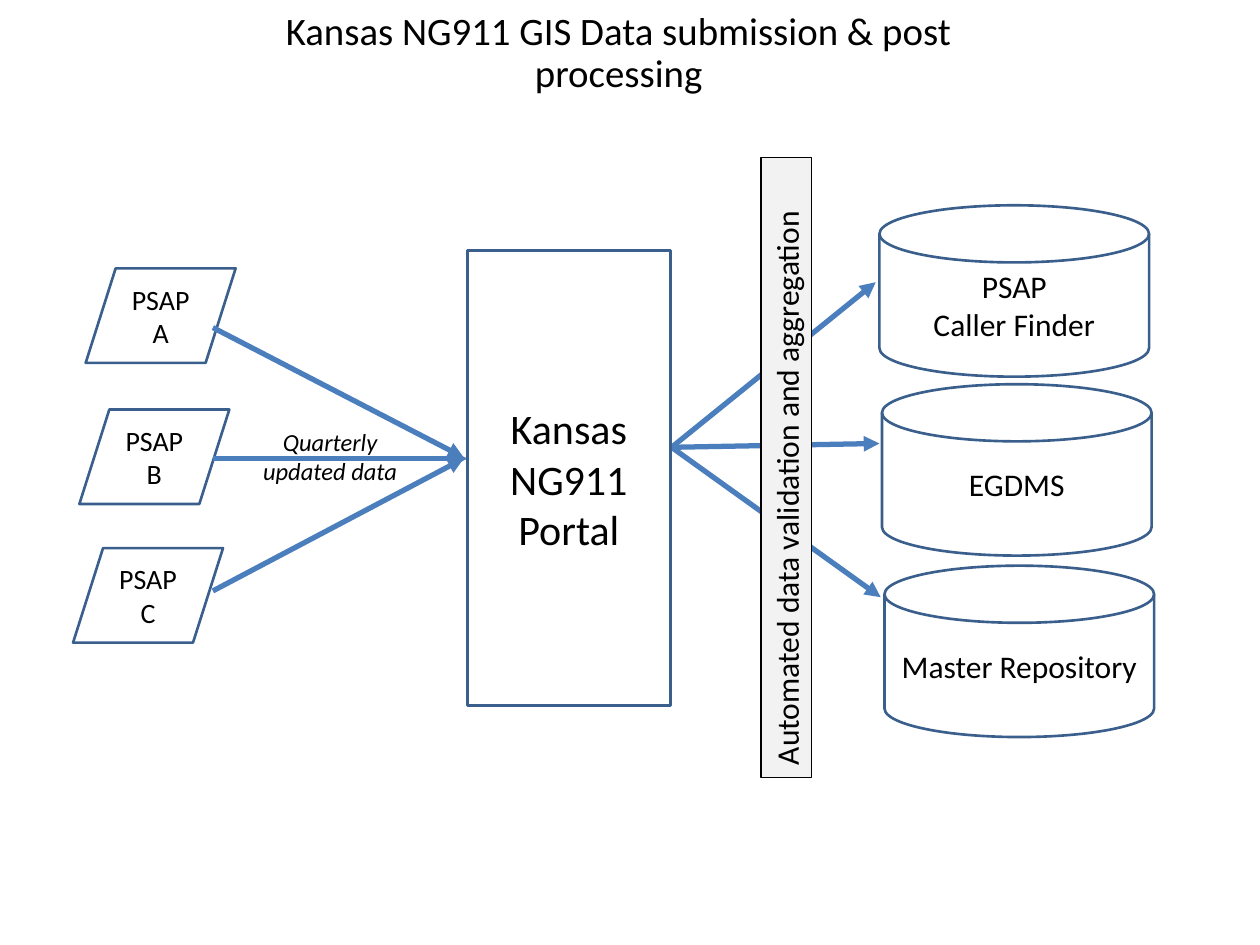
from pptx import Presentation
from pptx.dml.color import RGBColor
from pptx.enum.shapes import MSO_CONNECTOR, MSO_SHAPE
from pptx.enum.text import MSO_ANCHOR, PP_ALIGN
from pptx.oxml.ns import qn
from pptx.util import Inches, Pt
from lxml.etree import SubElement

THEME = dict(font="Calibri", text="000000", outline="3A5F8C", arrow="4B7EBC", band="F2F2F2",
             title=22.2, portal=24, store=18, source=16, note=14)

TITLE = ["Kansas NG911 GIS Data submission & post processing"]
NOTE = ["Quarterly updated data"]
BAND = ["Automated data validation and aggregation"]
PORTAL = ["Kansas", "NG911 Portal"]
SOURCES = [(["PSAP A"], 0.68, 2.13), (["PSAP B"], 0.63, 3.25), (["PSAP C"], 0.58, 4.35)]
STORES = [(["PSAP", "Caller Finder"], 6.98, 1.63), (["EGDMS"], 7, 3.05),
          (["Master Repository"], 7.02, 4.49)]
SOURCE_SIZE = (1.19, 0.75)
STORE_SIZE = (2.14, 1.36)
SOURCE_X, PORTAL_OUT = 1.69, (5.33, 3.55)
INBOUND = [(2.6, (3.68, 3.63)), (3.64, (3.71, 3.64)), (4.69, (3.68, 3.64))]
OUTBOUND = [(6.95, 2.24), (6.98, 3.52), (6.99, 4.74)]


def rgb(name):
    return RGBColor.from_string(THEME[name])


def write(sp, lines, size, align=PP_ALIGN.CENTER, anchor=MSO_ANCHOR.MIDDLE):
    tf = sp.text_frame
    tf.word_wrap = True
    tf.vertical_anchor = anchor
    tf.text = "\n".join(lines)
    for p in tf.paragraphs:
        p.alignment = align
        p.font.name = THEME["font"]
        p.font.size = Pt(THEME[size])
        p.font.color.rgb = rgb("text")
    return tf


def add_box(s, kind, box, line="outline", width=1.5, fill=None):
    sp = s.shapes.add_shape(kind, *map(Inches, box))
    sp.shadow.inherit = False
    if fill:
        sp.fill.solid()
        sp.fill.fore_color.rgb = rgb(fill)
    else:
        sp.fill.background()
    sp.line.color.rgb = rgb(line)
    sp.line.width = Pt(width)
    return sp


def add_arrow(s, start, end):
    c = s.shapes.add_connector(MSO_CONNECTOR.STRAIGHT, *map(Inches, (*start, *end)))
    c.line.color.rgb = rgb("arrow")
    c.line.width = Pt(3)
    SubElement(c.line._get_or_add_ln(), qn("a:tailEnd"), type="triangle")
    SubElement(c._element.spPr, qn("a:effectLst"))


def add_text(s, box, lines, size, anchor):
    sp = s.shapes.add_textbox(*map(Inches, box))
    return write(sp, lines, size, anchor=anchor)


def main():
    """Build the data submission flow slide."""
    prs = Presentation()
    prs.slide_width, prs.slide_height = Inches(10), Inches(7.5)
    s = prs.slides.add_slide(prs.slide_layouts[6])

    tf = add_text(s, (1.5, 0.22, 6.82, 0.58), TITLE, "title", MSO_ANCHOR.BOTTOM)
    tf.margin_left = tf.margin_right = Inches(0.07)
    tf.margin_top = tf.margin_bottom = Inches(0.04)
    tf.paragraphs[0].line_spacing = 0.9

    for lines, x, y in SOURCES:
        sp = add_box(s, MSO_SHAPE.FLOWCHART_DATA, (x, y, *SOURCE_SIZE))
        write(sp, lines, "source")
    for y, end in INBOUND:
        add_arrow(s, (SOURCE_X, y), end)
    for end in OUTBOUND:
        add_arrow(s, PORTAL_OUT, end)

    tf = add_text(s, (1.93, 3.34, 1.38, 0.57), NOTE, "note", MSO_ANCHOR.TOP)
    tf.paragraphs[0].font.italic = True

    for lines, x, y in STORES:
        sp = add_box(s, MSO_SHAPE.FLOWCHART_MAGNETIC_DISK, (x, y, *STORE_SIZE))
        write(sp, lines, "store")

    sp = add_box(s, MSO_SHAPE.RECTANGLE, (3.78, 3.51, 4.92, 0.4), "text", 0.75, "band")
    sp.rotation = 270
    write(sp, BAND, "store", PP_ALIGN.LEFT, MSO_ANCHOR.TOP)

    sp = add_box(s, MSO_SHAPE.FLOWCHART_PROCESS, (3.71, 1.99, 1.61, 3.61))
    write(sp, PORTAL, "portal")
    prs.save("out.pptx")


if __name__ == "__main__":
    main()
